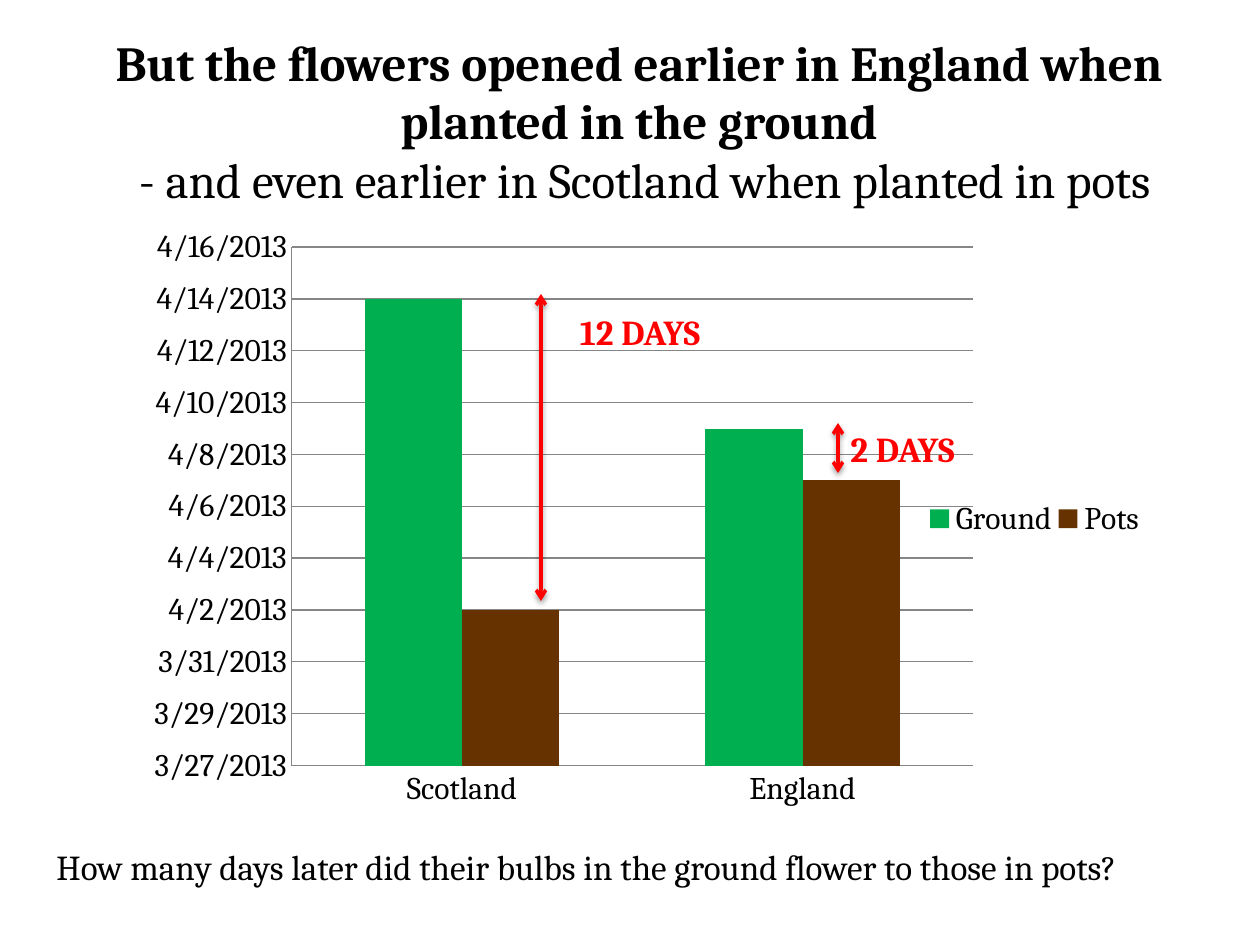
from lxml import etree
from pptx import Presentation
from pptx.chart.data import CategoryChartData as Data
from pptx.dml.color import RGBColor as Rgb
from pptx.enum.chart import XL_CHART_TYPE as Chart, XL_LEGEND_POSITION as Side, XL_TICK_MARK as Tick
from pptx.enum.shapes import MSO_CONNECTOR as Link
from pptx.enum.text import MSO_AUTO_SIZE as Fit, PP_ALIGN as Align
from pptx.oxml import parse_xml
from pptx.oxml.ns import nsdecls, qn
from pptx.util import Emu, Pt

PX = 914400 / 126
FACE = "Cambria"
HUES = {"ink": "000000", "ground": "00B050", "pots": "663300", "mark": "FF0000", "grid": "868686"}
BASE = 41360  # 3/27/2013 as a date serial
DAYS = {"Ground": (18, 13), "Pots": (6, 11)}  # days after BASE


def px(*nums):
    return [Emu(round(n * PX)) for n in nums]


def hue(name):
    return Rgb.from_string(HUES[name])


def style(font, size, color="ink", **more):
    for key, val in {"name": FACE, "size": Pt(size), **more}.items():
        setattr(font, key, val)
    font.color.rgb = hue(color)


def text(slide, box, lines, size, color="ink", align=Align.LEFT):
    """Place a text box; lines holds (wording, bold) pairs."""
    frame = slide.shapes.add_textbox(*px(*box)).text_frame
    frame.word_wrap = True
    frame.auto_size = Fit.SHAPE_TO_FIT_TEXT
    for i, (words, bold) in enumerate(lines):
        para = frame.add_paragraph() if i else frame.paragraphs[0]
        para.alignment = align
        run = para.add_run()
        run.text = words
        style(run.font, size, color, bold=bold)


def arrow(slide, x, top, end):
    line = slide.shapes.add_connector(Link.STRAIGHT, *px(x, top, x, end))
    line.line.color.rgb = hue("mark")
    line.line.width = Pt(2)
    ln = line.line._get_or_add_ln()
    for tag in ("a:headEnd", "a:tailEnd"):
        etree.SubElement(ln, qn(tag), type="arrow")
    line._element.spPr.append(parse_xml(
        f'<a:effectLst {nsdecls("a")}><a:outerShdw blurRad="40000" dist="20000" dir="5400000" '
        'rotWithShape="0"><a:srgbClr val="000000"><a:alpha val="38000"/></a:srgbClr>'
        '</a:outerShdw></a:effectLst>'))


def layout(node, spot, box, inner=False):
    """Fix a chart part at box, given as shares of the chart area."""
    for old in node.findall(qn("c:layout")):
        node.remove(old)
    parts = '<c:layoutTarget val="inner"/>' if inner else ""
    parts += '<c:xMode val="edge"/><c:yMode val="edge"/>'
    parts += "".join(f'<c:{k} val="{v}"/>' for k, v in zip("xywh", box))
    node.insert(spot, parse_xml(
        f'<c:layout {nsdecls("c")}><c:manualLayout>{parts}</c:manualLayout></c:layout>'))


def graph(slide, box):
    data = Data(number_format="m/d/yyyy")
    data.categories = ["Scotland", "England"]
    for name, days in DAYS.items():
        data.add_series(name, [BASE + d for d in days])
    chart = slide.shapes.add_chart(Chart.COLUMN_CLUSTERED, *px(*box), data).chart
    style(chart.font, 10)
    chart.has_title = False
    plot = chart.plots[0]
    for key, val in {"gap_width": 150, "overlap": 0, "vary_by_categories": False}.items():
        setattr(plot, key, val)
    for bar in plot.series:
        bar.format.fill.solid()
        bar.format.fill.fore_color.rgb = hue(bar.name.lower())

    dates = chart.value_axis
    for axis in (chart.category_axis, dates):
        axis.major_tick_mark = axis.minor_tick_mark = Tick.NONE
        axis.format.line.color.rgb = hue("grid")
        style(axis.tick_labels.font, 18)
    for key, val in {"minimum_scale": BASE, "maximum_scale": BASE + 20, "major_unit": 2,
                     "has_major_gridlines": True}.items():
        setattr(dates, key, val)
    dates.major_gridlines.format.line.color.rgb = hue("grid")
    dates.tick_labels.number_format = "m/d/yyyy"
    dates.tick_labels.number_format_is_linked = False

    chart.has_legend = True
    key = chart.legend
    key.position = Side.RIGHT
    key.include_in_layout = False
    style(key.font, 18)
    layout(chart._chartSpace.chart.plotArea, 0, (0.156, 0.05, 0.673, 0.86), inner=True)
    layout(key._element, 1, (0.78, 0.47, 0.22, 0.06))


def gap(slide, box, end, words, drop, align=Align.LEFT):
    """Mark a span of days: an arrow down the left of box, its label drop px below the top."""
    x, top, wide, high = box
    arrow(slide, x, top, end)
    text(slide, (x, top + drop, wide, high), [(words, True)], 20, "mark", align)


def main():
    deck = Presentation()
    deck.slide_width, deck.slide_height = px(1260, 945)
    slide = deck.slides.add_slide(deck.slide_layouts[6])
    text(slide, (64, 26, 1150, 190), [
        ("But the flowers opened earlier in England when planted in the ground", True),
        (" - and even earlier in Scotland when planted in pots", False)], 28, align=Align.CENTER)
    graph(slide, (134, 217, 1012, 603))
    text(slide, (44, 839, 1201, 55), [
        ("How many days later did their bulbs in the ground flower to those in pots?", False)], 20)
    gap(slide, (541, 294, 198, 55), 601, "12 DAYS", 10, Align.CENTER)
    gap(slide, (838, 423, 215, 55), 473, "2 DAYS", -2)
    deck.save("out.pptx")


if __name__ == "__main__":
    main()
